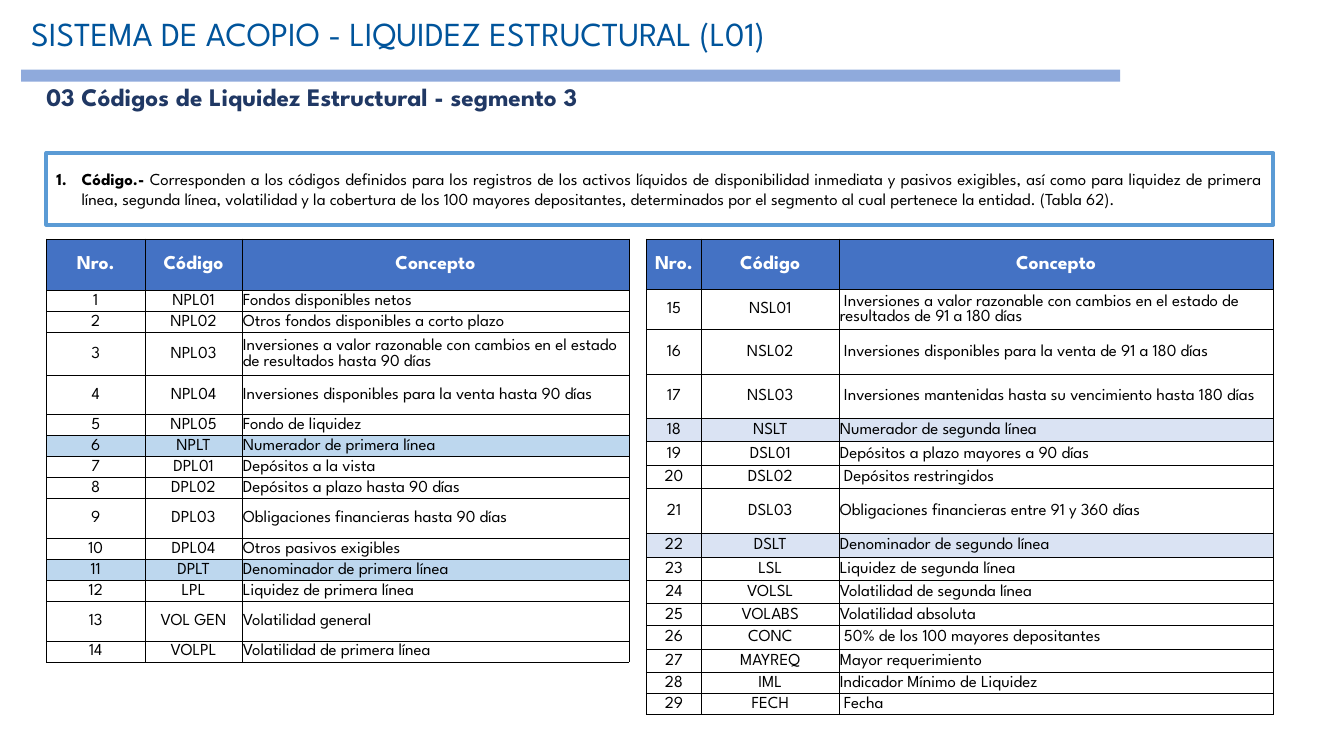
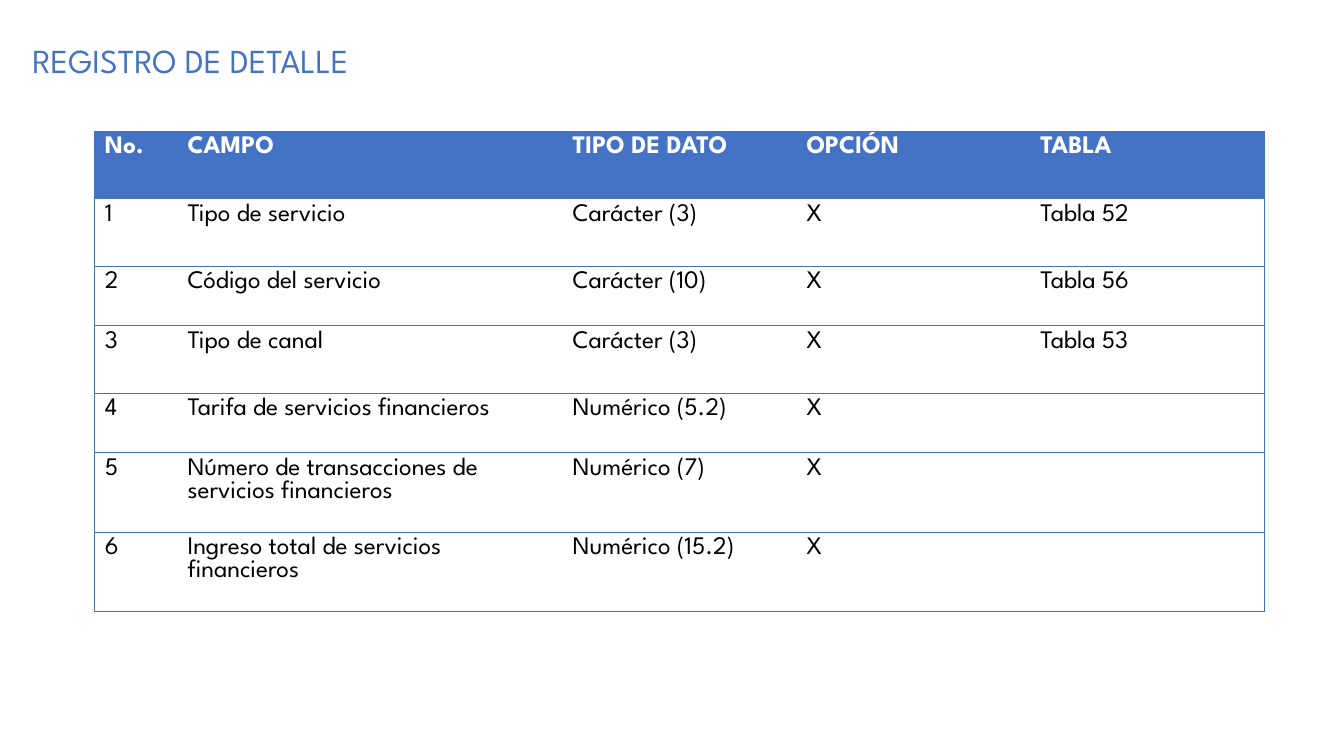
from lxml.etree import SubElement
from pptx import Presentation
from pptx.dml.color import RGBColor
from pptx.enum.shapes import MSO_SHAPE
from pptx.enum.text import MSO_ANCHOR, MSO_AUTO_SIZE, PP_ALIGN
from pptx.oxml.ns import qn
from pptx.util import Emu, Pt

PX = 9144
FONT = "League Spartan"
COLORS = {
    "title": "00549B",
    "band": "8FAADC",
    "accent": "4472C4",
    "subtitle": "203864",
    "frame": "5B9BD5",
    "first_line": "BDD7EE",
    "second_line": "DAE3F3",
    "white": "FFFFFF",
    "black": "000000",
}
SIDES = {"left": "a:lnL", "right": "a:lnR", "top": "a:lnT", "bottom": "a:lnB"}

FIRST_LINE_CODES = [
    ("1", "NPL01", "Fondos disponibles netos"),
    ("2", "NPL02", "Otros fondos disponibles a corto plazo"),
    ("3", "NPL03", "Inversiones a valor razonable con cambios en el estado de resultados hasta 90 días"),
    ("4", "NPL04", "Inversiones disponibles para la venta hasta 90 días"),
    ("5", "NPL05", "Fondo de liquidez"),
    ("6", "NPLT", "Numerador de primera línea"),
    ("7", "DPL01", "Depósitos a la vista"),
    ("8", "DPL02", "Depósitos a plazo hasta 90 días"),
    ("9", "DPL03", "Obligaciones financieras hasta 90 días"),
    ("10", "DPL04", "Otros pasivos exigibles"),
    ("11", "DPLT", "Denominador de primera línea"),
    ("12", "LPL", "Liquidez de primera línea"),
    ("13", "VOL GEN", "Volatilidad general"),
    ("14", "VOLPL", "Volatilidad de primera línea"),
]
SECOND_LINE_CODES = [
    ("15", "NSL01", " Inversiones a valor razonable con cambios en el estado de resultados de 91 a 180 días"),
    ("16", "NSL02", " Inversiones disponibles para la venta de 91 a 180 días"),
    ("17", "NSL03", " Inversiones mantenidas hasta su vencimiento hasta 180 días"),
    ("18", "NSLT", "Numerador de segunda línea"),
    ("19", "DSL01", "Depósitos a plazo mayores a 90 días"),
    ("20", "DSL02", " Depósitos restringidos"),
    ("21", "DSL03", "Obligaciones financieras entre 91 y 360 días"),
    ("22", "DSLT", "Denominador de segundo línea"),
    ("23", "LSL", "Liquidez de segunda línea"),
    ("24", "VOLSL", "Volatilidad de segunda línea"),
    ("25", "VOLABS", "Volatilidad absoluta"),
    ("26", "CONC", " 50% de los 100 mayores depositantes"),
    ("27", "MAYREQ", "Mayor requerimiento"),
    ("28", "IML", "Indicador Mínimo de Liquidez"),
    ("29", "FECH", " Fecha"),
]
DETAIL_FIELDS = [
    ("No.", "CAMPO", "TIPO DE DATO", "OPCIÓN", "TABLA"),
    ("1", "Tipo de servicio", "Carácter (3)", "X", "Tabla 52"),
    ("2", "Código del servicio", "Carácter (10)", "X", "Tabla 56"),
    ("3", "Tipo de canal", "Carácter (3)", "X", "Tabla 53"),
    ("4", "Tarifa de servicios financieros", "Numérico (5.2)", "X", ""),
    ("5", "Número de transacciones de servicios financieros", "Numérico (7)", "X", ""),
    ("6", "Ingreso total de servicios financieros", "Numérico (15.2)", "X", ""),
]


def px(value):
    return Emu(value * PX)


def color(name):
    return RGBColor.from_string(COLORS[name])


def set_attributes(target, values):
    for name, value in values.items():
        setattr(target, name, value)


def place(shape, box):
    set_attributes(shape, dict(zip(("left", "top", "width", "height"), map(px, box))))


def margins(left, top, right, bottom):
    return {
        "margin_left": px(left),
        "margin_top": px(top),
        "margin_right": px(right),
        "margin_bottom": px(bottom),
    }


def add_run(paragraph, text, size, color_name, bold=False):
    run = paragraph.add_run()
    run.text = text
    set_attributes(run.font, {"name": FONT, "size": Pt(size), "bold": bold})
    run.font.color.rgb = color(color_name)


def add_title(slide, box, text, color_name, anchor, line_spacing):
    title = slide.shapes.title
    place(title, box)
    frame_format = {
        "word_wrap": True,
        "auto_size": MSO_AUTO_SIZE.NONE,
        "vertical_anchor": anchor,
        **margins(10, 5, 10, 5),
    }
    set_attributes(title.text_frame, frame_format)
    paragraph = title.text_frame.paragraphs[0]
    set_attributes(paragraph, {"alignment": PP_ALIGN.LEFT, "line_spacing": line_spacing})
    add_run(paragraph, text, 24, color_name)


def add_band(slide, box):
    band = slide.shapes.add_shape(MSO_SHAPE.RECTANGLE, *map(px, box))
    band.shadow.inherit = False
    band.fill.solid()
    band.fill.fore_color.rgb = color("band")
    band.line.fill.background()


def add_subtitle(slide, box, text):
    subtitle = slide.shapes.add_textbox(*map(px, box))
    set_attributes(subtitle.text_frame, {"word_wrap": True, **margins(0, 0, 13, 0)})
    add_run(subtitle.text_frame.paragraphs[0], text, 18, "subtitle", True)


def add_definition(slide, box, term, description):
    definition = slide.placeholders[1]
    place(definition, box)
    definition.line.color.rgb = color("frame")
    definition.line.width = Pt(3)
    frame_format = {
        "word_wrap": True,
        "auto_size": MSO_AUTO_SIZE.NONE,
        "vertical_anchor": MSO_ANCHOR.MIDDLE,
        **margins(10, 5, 10, 5),
    }
    set_attributes(definition.text_frame, frame_format)
    paragraph = definition.text_frame.paragraphs[0]
    set_attributes(paragraph, {"alignment": PP_ALIGN.JUSTIFY, "space_before": Pt(0)})
    properties = paragraph._p.get_or_add_pPr()
    properties.set("marL", str(px(25)))
    properties.set("indent", str(px(-25)))
    SubElement(properties, qn("a:buFont"), typeface=FONT)
    SubElement(properties, qn("a:buAutoNum"), type="arabicPeriod")
    add_run(paragraph, term, 12, "black", True)
    add_run(paragraph, description, 12, "black")


def set_borders(cell, visible_sides, color_name):
    properties = cell._tc.get_or_add_tcPr()
    for position, (side, tag) in enumerate(SIDES.items()):
        line = properties.makeelement(qn(tag), {"w": str(Pt(0.5))})
        if side in visible_sides:
            fill = SubElement(line, qn("a:solidFill"))
            SubElement(fill, qn("a:srgbClr"), val=COLORS[color_name])
        else:
            SubElement(line, qn("a:noFill"))
        properties.insert(position, line)


def add_grid(slide, origin, widths, heights, rows):
    box = (*origin, sum(widths), sum(heights))
    table = slide.shapes.add_table(len(rows), len(widths), *map(px, box)).table
    for column, width in zip(table.columns, widths):
        column.width = px(width)
    for row, height in zip(table.rows, heights):
        row.height = px(height)
    return table


def fill_cell(cell, text, size, is_header, fill_name):
    cell.fill.solid()
    cell.fill.fore_color.rgb = color("accent" if is_header else fill_name)
    paragraph = cell.text_frame.paragraphs[0]
    if text:
        add_run(paragraph, text, size, "white" if is_header else "black", is_header)
    return paragraph


def add_code_table(slide, origin, widths, heights, codes, highlight):
    rows = [("Nro.", "Código", "Concepto"), *codes]
    table = add_grid(slide, origin, widths, heights, rows)
    for row_index, row in enumerate(rows):
        is_header = row_index == 0
        is_total = row[1].endswith("LT")
        for column_index, text in enumerate(row):
            cell = table.cell(row_index, column_index)
            set_attributes(cell, {"vertical_anchor": MSO_ANCHOR.MIDDLE, **margins(1, 1, 1, 0)})
            paragraph = fill_cell(cell, text, 14 if is_header else 12, is_header,
                                  highlight if is_total else "white")
            centered = is_header or column_index < 2
            paragraph.alignment = PP_ALIGN.CENTER if centered else PP_ALIGN.LEFT
            set_borders(cell, SIDES, "black")


def add_detail_table(slide, origin, widths, heights, rows):
    table = add_grid(slide, origin, widths, heights, rows)
    for row_index, row in enumerate(rows):
        for column_index, text in enumerate(row):
            cell = table.cell(row_index, column_index)
            set_attributes(cell, margins(10, 5, 10, 5))
            fill_cell(cell, text, 18, row_index == 0, "white")
            sides = {"top", "bottom"}
            if column_index == 0:
                sides.add("left")
            if column_index == len(widths) - 1:
                sides.add("right")
            set_borders(cell, sides, "accent")


def build_codes_slide(presentation):
    slide = presentation.slides.add_slide(presentation.slide_layouts[1])
    add_title(slide, (21, 8, 931, 50), "SISTEMA DE ACOPIO - LIQUIDEZ ESTRUCTURAL (L01)",
              "title", MSO_ANCHOR.TOP, 1.0)
    add_band(slide, (21, 69, 1090, 12))
    add_code_table(slide, (46, 237), (98, 96, 384),
                   (51, 21, 21, 42, 39, 21, 21, 21, 21, 39, 21, 21, 21, 39, 21),
                   FIRST_LINE_CODES, "first_line")
    add_code_table(slide, (641, 237), (55, 136, 431),
                   (50, 40, 44, 44, 23, 24, 23, 44, 24, 23, 23, 22, 23, 23, 21, 21),
                   SECOND_LINE_CODES, "second_line")
    add_definition(
        slide, (46, 152, 1217, 71), "Código.- ",
        "Corresponden a los códigos definidos para los registros de los activos líquidos de "
        "disponibilidad inmediata y pasivos exigibles, así como para liquidez de primera línea, "
        "segunda línea, volatilidad y la cobertura de los 100 mayores depositantes, "
        "determinados por el segmento al cual pertenece la entidad. (Tabla 62).")
    add_subtitle(slide, (46, 81, 723, 56), "03 Códigos de Liquidez Estructural - segmento 3")


def build_detail_slide(presentation):
    slide = presentation.slides.add_slide(presentation.slide_layouts[5])
    add_title(slide, (22, 23, 1094, 79), "REGISTRO DE DETALLE", "accent", MSO_ANCHOR.MIDDLE, 0.9)
    add_detail_table(slide, (94, 130), (82, 382, 232, 232, 232),
                     (67, 67, 59, 67, 59, 79, 79), DETAIL_FIELDS)


def main():
    presentation = Presentation()
    set_attributes(presentation, {"slide_width": px(1333), "slide_height": px(750)})
    build_codes_slide(presentation)
    build_detail_slide(presentation)
    presentation.save("out.pptx")


if __name__ == "__main__":
    main()
